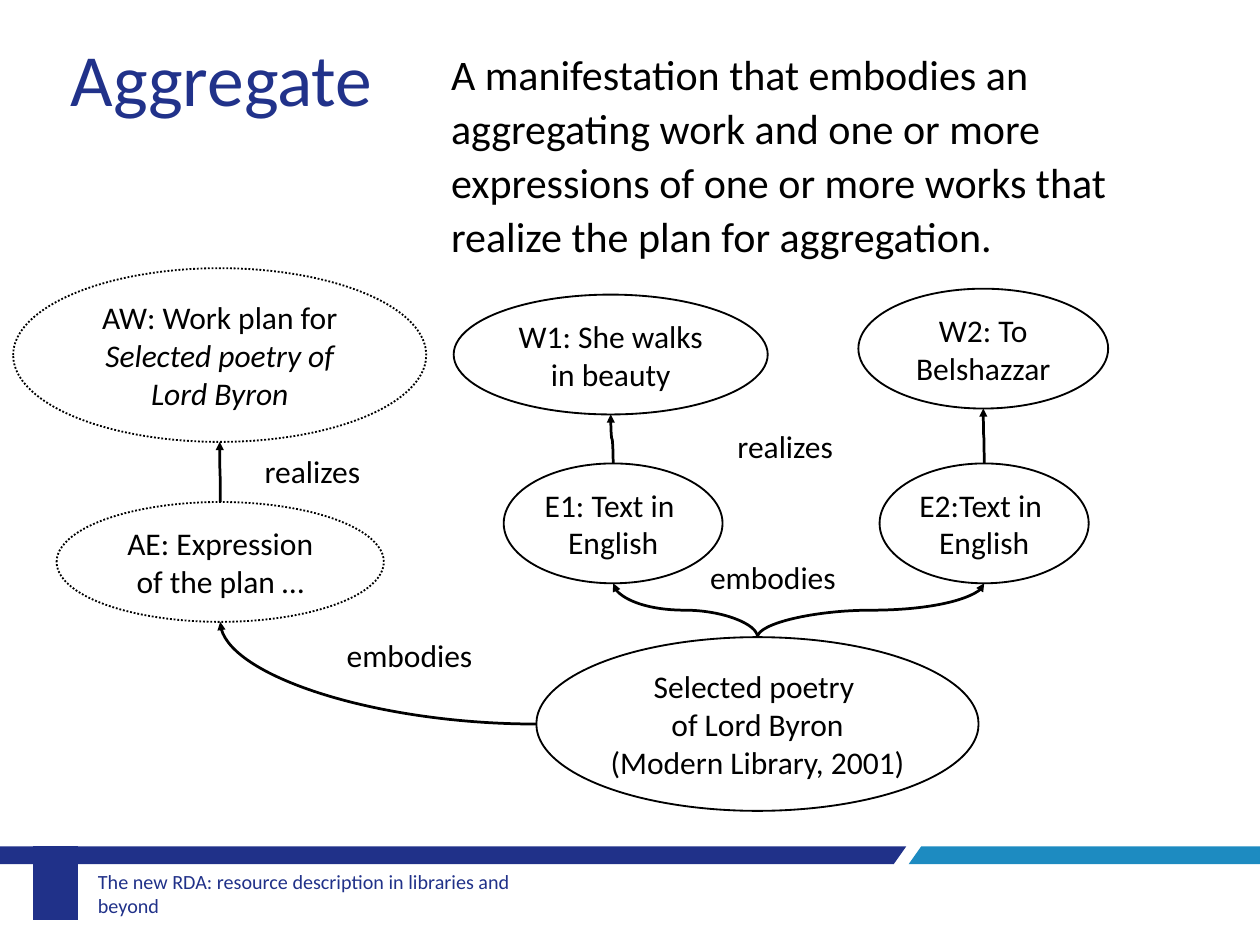
"""Build a slide that explains aggregates with a diagram of works, expressions and a manifestation."""
from lxml import etree
from pptx import Presentation
from pptx import util as u
from pptx.dml.color import RGBColor
from pptx.enum import dml, shapes, text
from pptx.oxml import ns

BLACK = RGBColor(0x00, 0x00, 0x00)
NAVY = RGBColor(0x20, 0x31, 0x89)
TITLE_BLUE = RGBColor(0x21, 0x32, 0x8A)
SKY = RGBColor(0x1D, 0x8B, 0xC1)


class SlideBuilder:
    def __init__(self, page, font="Calibri", size=25.7):
        self.page = page
        self.font = font
        self.size = size

    def set_words(self, box, words, size=None, color=BLACK, align=text.PP_ALIGN.LEFT,
                  anchor=text.MSO_ANCHOR.TOP, wrap=True, italic=()):
        frame = box.text_frame
        frame.text = words
        frame.word_wrap = wrap
        frame.auto_size = text.MSO_AUTO_SIZE.NONE
        frame.vertical_anchor = anchor
        for index, para in enumerate(frame.paragraphs):
            para.alignment = align
            para.space_before = u.Pt(0)
            for span in para.runs:
                span.font.name = self.font
                span.font.size = u.Pt(size or self.size)
                span.font.color.rgb = color
                if index in italic:
                    span.font.italic = True

    def place(self, box, left, top, width, height):
        box.left, box.top = u.Cm(left), u.Cm(top)
        box.width, box.height = u.Cm(width), u.Cm(height)

    def title(self, words, *area):
        box = self.page.shapes.title
        self.place(box, *area)
        self.set_words(box, words, size=60, color=TITLE_BLUE, wrap=False)

    def body(self, words, *area):
        box = self.page.placeholders[1]
        self.place(box, *area)
        self.set_words(box, words, size=34.3)
        para = box.text_frame.paragraphs[0]
        para.line_spacing = 1.07
        para.space_after = u.Pt(11.4)
        settings = para._p.get_or_add_pPr()
        settings.set("marL", "0")
        settings.set("indent", "0")
        etree.SubElement(settings, ns.qn("a:buNone"))

    def label(self, words, left, top, width, height=1.35, **style):
        box = self.page.shapes.add_textbox(*map(u.Cm, (left, top, width, height)))
        self.set_words(box, words, **style)
        return box

    def footer(self, words, *area):
        box = self.label(words, *area, size=16.4, color=NAVY, anchor=text.MSO_ANCHOR.MIDDLE)
        frame = box.text_frame
        frame.margin_left = frame.margin_right = u.Cm(0.18)
        frame.margin_top = frame.margin_bottom = u.Cm(0.1)

    def band(self, color, *points):
        corners = [(u.Cm(x), u.Cm(y)) for x, y in points]
        builder = self.page.shapes.build_freeform(*corners[0])
        builder.add_line_segments(corners[1:])
        shape = builder.convert_to_shape()
        shape.shadow.inherit = False
        shape.fill.solid()
        shape.fill.fore_color.rgb = color
        shape.line.fill.background()

    def ellipse(self, words, left, top, width, height=3.45, dotted=False, wrap=True, italic=()):
        shape = self.page.shapes.add_shape(
            shapes.MSO_SHAPE.OVAL, *map(u.Cm, (left, top, width, height)))
        shape.shadow.inherit = False
        shape.fill.background()
        shape.line.color.rgb = BLACK
        shape.line.width = u.Pt(1.5)
        if dotted:
            shape.line.dash_style = dml.MSO_LINE.ROUND_DOT
        self.set_words(shape, words, align=text.PP_ALIGN.CENTER,
                       anchor=text.MSO_ANCHOR.MIDDLE, wrap=wrap, italic=italic)
        return shape

    def curve(self, left, top, width, height, degrees, flips=(), preset="curvedConnector3"):
        line = self.page.shapes.add_connector(
            shapes.MSO_CONNECTOR.CURVE, left, top, left + width, top + height)
        line.line.color.rgb = BLACK
        line.line.width = u.Pt(2.25)
        props = line._element.spPr
        props.find(ns.qn("a:prstGeom")).set("prst", preset)
        frame = props.find(ns.qn("a:xfrm"))
        frame.set("rot", str(degrees * 60000))
        for flip in flips:
            frame.set(flip, "1")
        etree.SubElement(props.find(ns.qn("a:ln")), ns.qn("a:tailEnd"), type="triangle")
        etree.SubElement(props, ns.qn("a:effectLst"))

    def rise(self, lower, upper):
        start_x = lower.left + lower.width // 2
        end_x = upper.left + upper.width // 2
        end_y = upper.top + upper.height
        length, shift = lower.top - end_y, abs(end_x - start_x)
        left = (start_x + end_x - length) // 2
        top = (lower.top + end_y - shift) // 2
        if end_x > start_x:
            self.curve(left, top, length, shift, 90, ("flipH", "flipV"))
        else:
            self.curve(left, top, length, shift, 270, ("flipV",))

    def sweep(self, source, target):
        left = target.left + target.width // 2
        top = target.top + target.height
        middle = source.top + source.height // 2
        self.curve(left, top, source.left - left, middle - top, 180, preset="curvedConnector2")


def main():
    deck = Presentation()
    deck.slide_width, deck.slide_height = u.Cm(36.27), u.Cm(27.2)
    slide = SlideBuilder(deck.slides.add_slide(deck.slide_layouts[1]))

    top, bottom = 24.36, 24.87
    slide.band(NAVY, (26.09, top), (0, top), (0, bottom), (25.73, bottom))
    slide.band(SKY, (36.27, top), (26.52, top), (26.16, bottom), (36.27, bottom))
    slide.band(NAVY, (0.94, top), (2.26, top), (2.26, 26.49), (0.94, 26.49))
    slide.footer("The new RDA: resource description in libraries and beyond",
                 2.64, 25.02, 14.02, 1.4)

    slide.title("Aggregate", 1.78, 0.81, 9.3, 2.82)
    slide.body("A manifestation that embodies an aggregating work and one or more "
               "expressions of one or more works that realize the plan for aggregation.",
               12.73, 1.17, 21.92, 6.45)

    manifestation = slide.ellipse("Selected poetry \nof Lord Byron\n(Modern Library, 2001)",
                                  15.44, 18.34, 12.73, 5, wrap=False)
    first_text = slide.ellipse("E1: Text in \nEnglish", 14.5, 13.34, 6.3, wrap=False)
    first_work = slide.ellipse("W1: She walks in beauty", 13.06, 8.48, 9.04)
    second_text = slide.ellipse("E2:Text in \nEnglish", 25.32, 13.34, 6.02, wrap=False)
    second_work = slide.ellipse("W2: To Belshazzar", 24.71, 8.31, 7.19)
    plan_text = slide.ellipse("AE: Expression of the plan …", 1.63, 14.45, 9.42, dotted=True)
    plan_work = slide.ellipse("AW: Work plan for\nSelected poetry of Lord Byron",
                              0.38, 7.72, 11.89, 5, dotted=True, italic=(1,))

    for lower, upper in ((plan_text, plan_work), (first_text, first_work),
                         (second_text, second_work), (manifestation, second_text),
                         (manifestation, first_text)):
        slide.rise(lower, upper)
    slide.sweep(manifestation, plan_text)

    for left, label_top in ((20.98, 12.17), (7.37, 12.88)):
        slide.label("realizes", left, label_top, 3.73)
    for left, label_top in ((20.19, 15.95), (9.73, 18.19)):
        slide.label("embodies", left, label_top, 4.72)

    deck.save("out.pptx")


if __name__ == "__main__":
    main()
